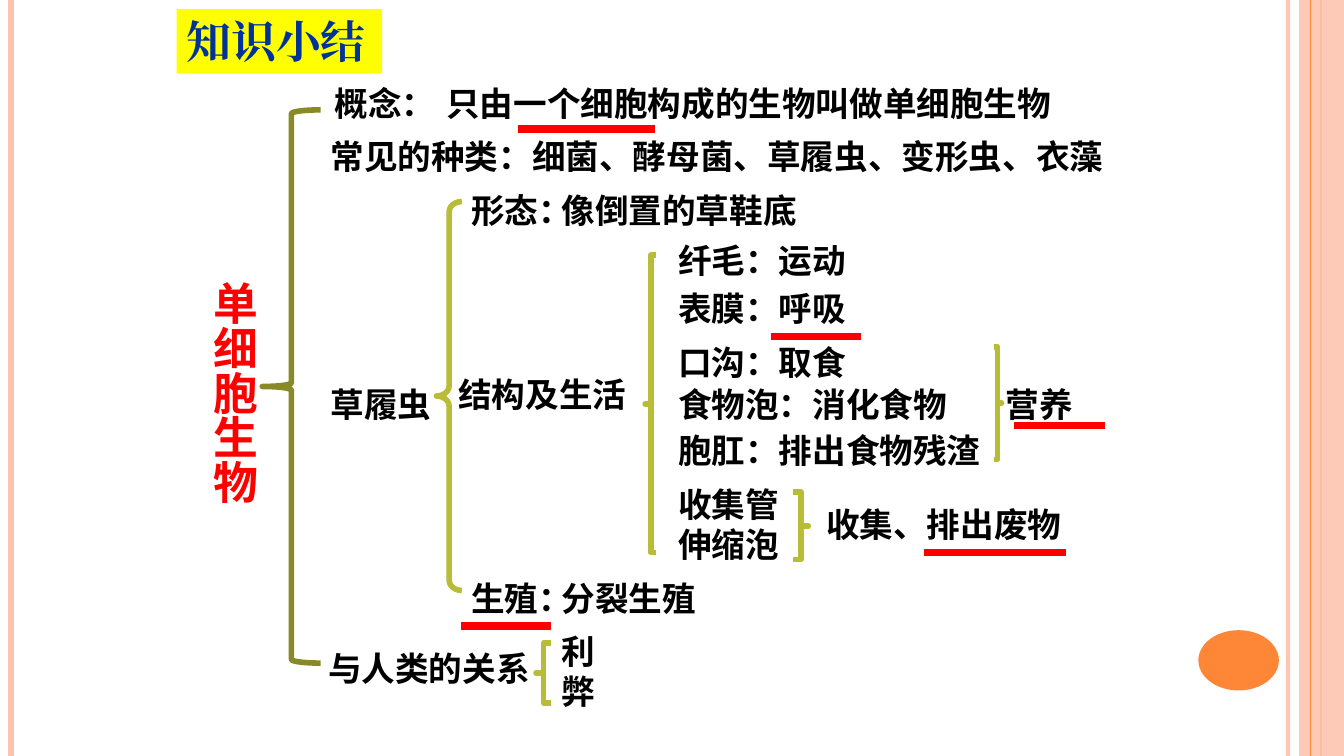
from dataclasses import dataclass

from lxml.etree import SubElement
from pptx import Presentation
from pptx.dml.color import RGBColor
from pptx.enum.shapes import MSO_CONNECTOR as Line, MSO_SHAPE as Shape
from pptx.oxml.ns import qn
from pptx.util import Cm, Pt


@dataclass(frozen=True)
class Theme:
    """Colours, fonts and sizes of the slide."""
    pink: str = "FEC3AE"
    orange: str = "FE8637"
    olive: str = "888A2A"
    lime: str = "B9BC38"
    red: str = "FF0000"
    yellow: str = "FFFF00"
    navy: str = "003399"
    black: str = "000000"
    font: str = "Arial"
    title_font: str = "Times New Roman"
    body: int = 24
    heading: int = 32
    brace_width: float = 4
    mark_width: float = 5.25


T = Theme()
ROW = 1.27


def set_alpha(sp, percent):
    """Set the opacity of the shape's first colour."""
    clr = next(sp._element.spPr.iter(qn("a:srgbClr")))
    SubElement(clr, qn("a:alpha"), val=str(percent * 1000))


def add_line(s, x1, y1, x2, y2, color, width):
    """Draw a straight line without a shadow."""
    ln = s.shapes.add_connector(Line.STRAIGHT, Cm(x1), Cm(y1), Cm(x2), Cm(y2))
    ln.line.color.rgb = RGBColor.from_string(color)
    ln.line.width = Pt(width)
    SubElement(ln._element.spPr, qn("a:effectLst"))
    return ln


def add_mark(s, x, y, w):
    """Underline a key phrase in red."""
    add_line(s, x, y, x + w, y, T.red, T.mark_width)


def add_filled(s, kind, x, y, w, h, color):
    """Draw a filled shape without outline or shadow."""
    sp = s.shapes.add_shape(kind, Cm(x), Cm(y), Cm(w), Cm(h))
    sp.shadow.inherit = False
    sp.fill.solid()
    sp.fill.fore_color.rgb = RGBColor.from_string(color)
    sp.line.fill.background()
    return sp


def add_brace(s, x, y, w, h, color=T.lime, curve=0, rotation=0):
    """Draw a curly brace that opens to the right unless rotated."""
    sp = s.shapes.add_shape(Shape.LEFT_BRACE, Cm(x), Cm(y), Cm(w), Cm(h))
    sp.shadow.inherit = False
    sp.fill.background()
    sp.line.color.rgb = RGBColor.from_string(color)
    sp.line.width = Pt(T.brace_width)
    sp.adjustments[0], sp.adjustments[1] = curve, 0.5
    sp.rotation = rotation


def add_text(s, x, y, w, text, h=ROW, size=T.body, color=T.black, font=T.font):
    """Place bold text, one paragraph for each line."""
    tf = s.shapes.add_textbox(Cm(x), Cm(y), Cm(w), Cm(h)).text_frame
    tf.word_wrap = True
    tf.text = text
    fmt = {"name": font, "size": Pt(size), "bold": True}
    for p in tf.paragraphs:
        for r in p.runs:
            for key, value in fmt.items():
                setattr(r.font, key, value)
            r.font.color.rgb = RGBColor.from_string(color)
            SubElement(r.font._element, qn("a:ea"), typeface=font)
    return tf


def draw_frame(s, x, y, w, h):
    """Draw the stripes along both sides and the orange disc."""
    stripes = [(0.28, T.pink, 4.5), (32.46, T.pink, 3), (33.3, T.orange, 1.5)]
    lines = [add_line(s, x + dx, y, x + dx, y + h, color, width)
             for dx, color, width in stripes]
    set_alpha(lines[1], 93)
    band = add_filled(s, Shape.RECTANGLE, x + w - 1.13, y, 1.13, h, T.pink)
    set_alpha(band, 87)
    add_line(s, x + 33.02, y, x + 33.02, y + h, T.orange, 0.75)
    add_filled(s, Shape.OVAL, x + 30.2, y + 15.88, 2.03, 1.52, T.orange)


def draw_title(s, x, y, w, h):
    """Draw the heading on its yellow band."""
    add_filled(s, Shape.RECTANGLE, x, y, w, h, T.yellow)
    add_text(s, x, y, w, "知识小结", h, T.heading, T.navy, T.title_font)


def draw_root(s, x, y, w, h):
    """Draw the vertical topic and the brace over all branches."""
    tf = add_text(s, x, y + 4.06, 1.88, "单细胞生物", 6.76, T.heading, T.red)
    tf._txBody.bodyPr.set("vert", "eaVert")
    add_brace(s, x + w - 1.47, y, 1.47, h, T.olive, 0.063)


def draw_concept(s, x, y):
    """Draw the definition and the common kinds."""
    add_text(s, x + 0.1, y, 3.12, "概念：")
    add_text(s, x + 2.92, y, 15.88, "只由一个细胞构成的生物叫做单细胞生物")
    add_mark(s, x + 4.98, y + 1.29, 3.45)
    add_text(s, x, y + 1.34, 21, "常见的种类：细菌、酵母菌、草履虫、变形虫、衣藻")


def draw_paramecium(s, x, y):
    """Draw the paramecium branch with its three aspects."""
    add_text(s, x, y + 4.9, 3.38, "草履虫")
    add_brace(s, x + 2.92, y + 0.43, 0.64, 9.8, curve=0.399)
    add_text(s, x + 3.22, y + 4.65, 5.44, "结构及生活")
    for dy, name, detail in [(0, "形态：", "像倒置的草鞋底"),
                             (9.78, "生殖：", "分裂生殖")]:
        add_text(s, x + 3.55, y + dy, 3.3, name)
        add_text(s, x + 5.82, y + dy, 6.68, detail)
    add_mark(s, x + 3.55, y + 11.12, 2.26)


def draw_structure(s, x, y):
    """Draw the organelles and what they do."""
    add_brace(s, x, y + 0.51, 0.28, 7.49)
    organelles = [(0, "纤毛：运动"), (1.22, "表膜：呼吸"), (2.56, "口沟：取食"),
                  (3.63, "食物泡：消化食物"), (4.8, "胞肛：排出食物残渣")]
    for dy, text in organelles:
        add_text(s, x + 0.58, y + dy, 9, text)
    add_text(s, x + 0.58, y + 6.15, 3.15, "收集管\n伸缩泡", 2.36)
    add_brace(s, x + 8.78, y + 2.82, 0.2, 2.84, rotation=180)
    add_text(s, x + 8.84, y + 3.63, 2.6, "营养")
    add_brace(s, x + 3.73, y + 6.48, 0.38, 1.7, rotation=180)
    add_text(s, x + 4.31, y + 6.65, 6.68, "收集、排出废物")
    for dx, dy, w in [(3.17, 2.56, 2.26), (9.29, 4.8, 2.29), (7.03, 8, 3.58)]:
        add_mark(s, x + dx, y + dy, w)


def draw_relation(s, x, y):
    """Draw the relation to people, good and bad."""
    add_text(s, x, y + 0.44, 6, "与人类的关系")
    add_brace(s, x + 5.49, y + 0.44, 0.38, 1.5)
    add_text(s, x + 5.87, y, 3.38, "利\n弊", 2.36)


def main():
    """Build the summary slide and save it."""
    prs = Presentation()
    prs.slide_width, prs.slide_height = Cm(33.87), Cm(19.05)
    s = prs.slides.add_slide(prs.slide_layouts[6])
    draw_frame(s, 0, 0, 33.87, 19.05)
    draw_title(s, 4.45, 0.23, 5.18, 1.63)
    draw_root(s, 4.83, 2.77, 3.25, 13.94)
    draw_concept(s, 8.08, 1.96)
    draw_paramecium(s, 8.08, 4.65)
    draw_structure(s, 16.26, 5.92)
    draw_relation(s, 8.02, 15.77)
    prs.save("out.pptx")


if __name__ == "__main__":
    main()
